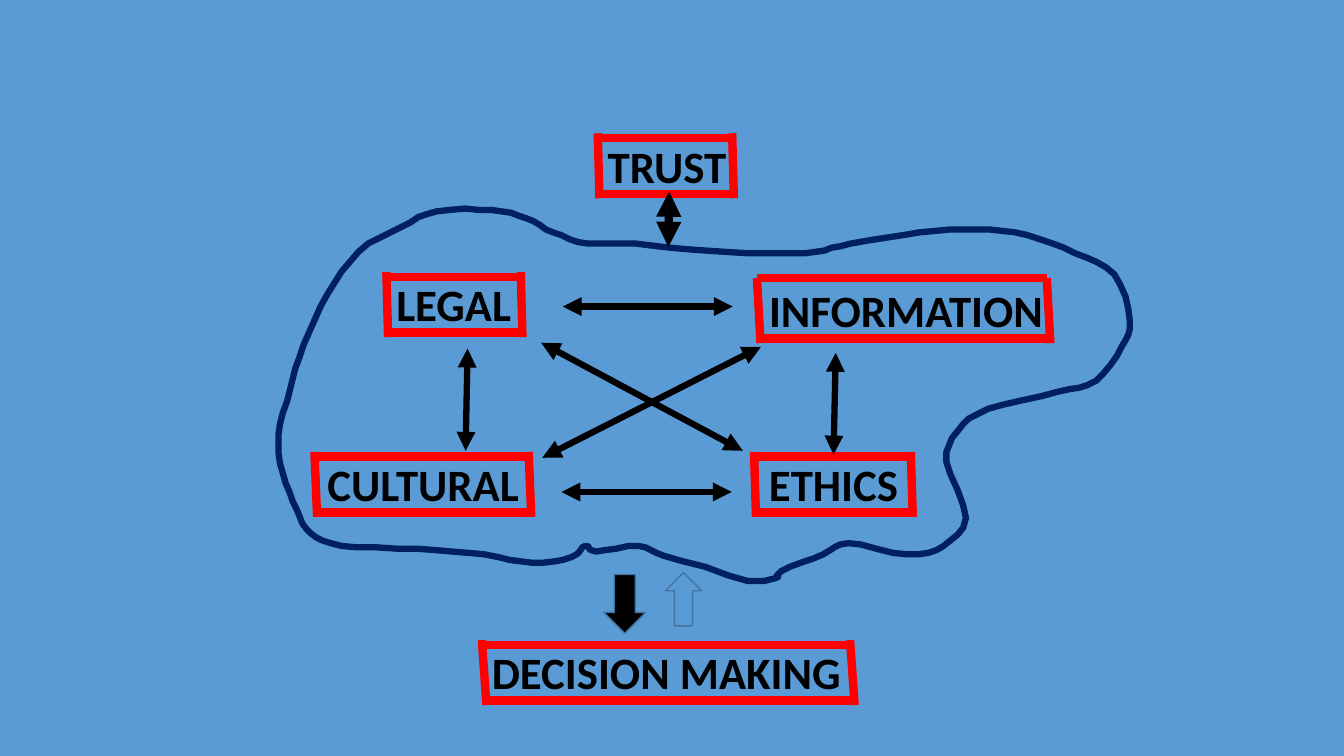
from dataclasses import dataclass

from lxml.etree import SubElement
from pptx import Presentation
from pptx.dml.color import RGBColor
from pptx.enum.shapes import MSO_CONNECTOR, MSO_SHAPE
from pptx.enum.text import MSO_AUTO_SIZE
from pptx.oxml.ns import qn
from pptx.shapes.autoshape import Shape
from pptx.slide import Slide
from pptx.util import Pt

Point = tuple[float, float]


@dataclass(frozen=True)
class Theme:
    background: str = "5B9BD5"
    ink: str = "000000"
    frame: str = "FF0000"
    cloud: str = "002060"
    arrow_border: str = "43739E"
    font: str = "Calibri"
    label_size: float = 32
    heavy_line: float = 6
    medium_line: float = 4.5
    thin_line: float = 1


@dataclass(frozen=True)
class Concept:
    text: str
    left: float
    top: float
    frame_width: float
    text_width: float
    text_offset: float = 0
    top_inset: float = 3.4


@dataclass(frozen=True)
class Link:
    start: Point
    end: Point
    weight: float


@dataclass(frozen=True)
class BlockArrow:
    kind: MSO_SHAPE
    left: float
    top: float
    width: float
    height: float
    fill: str


THEME = Theme()
FRAME_HEIGHT = 46.4
BOTTOM_INSET = 3.2
SKEW_RATIO = 1 / 80
CURVE_STEPS = 4

CONCEPTS = [
    Concept("TRUST", 427, 95.2, 96, 101),
    Concept("LEGAL", 276, 194.4, 96, 97),
    Concept("INFORMATION", 540.7, 198.7, 207, 220, 1.5, 0),
    Concept("CULTURAL", 224.6, 322.8, 153, 153, 2.2),
    Concept("ETHICS", 538.6, 322.8, 112, 108, 3.6),
    Concept("DECISION MAKING", 344.2, 457.2, 263, 266),
]

LINKS = [
    Link((402, 219), (523.4, 219), THEME.medium_line),
    Link((401, 351.4), (522.7, 351.4), THEME.medium_line),
    Link((332.6, 322), (334, 249), THEME.medium_line),
    Link((595.4, 324.7), (597, 252), THEME.medium_line),
    Link((530.6, 322), (386.6, 244.8), THEME.medium_line),
    Link((387.4, 327), (543.6, 247.7), THEME.medium_line),
    Link((477.4, 176.4), (478, 136.8), THEME.heavy_line),
]

BLOCK_ARROWS = [
    BlockArrow(MSO_SHAPE.DOWN_ARROW, 431.3, 410.4, 30, 42, THEME.ink),
    BlockArrow(MSO_SHAPE.UP_ARROW, 475.2, 409, 26, 38, THEME.background),
]

CLOUD_KNOTS: list[Point] = [
    (454, 174), (420, 174), (395, 166), (376, 156), (351, 150), (312, 151),
    (287, 162), (256, 180), (234, 210), (217, 246), (207, 279), (199, 310),
    (202, 338), (212, 364), (222, 381), (244, 390), (298, 392), (346, 396),
    (380, 402), (408, 398), (418, 390), (426, 394), (456, 390), (474, 397),
    (504, 405), (534, 415), (554, 413), (558, 408), (588, 396), (606, 388),
    (648, 396), (674, 390), (690, 370), (676, 330), (684, 308), (706, 292),
    (755, 280), (783, 272), (801, 248), (807, 229), (796, 196), (768, 181),
    (734, 168), (698, 164), (657, 166), (608, 174), (582, 180), (548, 181),
    (490, 178),
]


def color(value: str) -> RGBColor:
    return RGBColor.from_string(value)


def blend(before: float, start: float, end: float, after: float, t: float) -> float:
    linear = end - before
    square = 2 * before - 5 * start + 4 * end - after
    cube = 3 * (start - end) + after - before
    return start + (linear * t + square * t**2 + cube * t**3) / 2


def smooth_outline(knots: list[Point]) -> list[Point]:
    outline = []
    for index in range(len(knots)):
        window = [knots[(index + step) % len(knots)] for step in range(-1, 3)]
        for step in range(CURVE_STEPS):
            x, y = (blend(*axis, step / CURVE_STEPS) for axis in zip(*window))
            outline.append((x, y))
    return outline


def draw_line(slide: Slide, link: Link, line_color: str, arrows: bool) -> None:
    ends = [Pt(value) for value in (*link.start, *link.end)]
    connector = slide.shapes.add_connector(MSO_CONNECTOR.STRAIGHT, *ends)
    connector.line.width = Pt(link.weight)
    connector.line.color.rgb = color(line_color)
    properties = connector.element.spPr
    if arrows:
        for tag in ("a:headEnd", "a:tailEnd"):
            SubElement(properties.find(qn("a:ln")), qn(tag), type="triangle")
    SubElement(properties, qn("a:effectLst"))


def draw_label(slide: Slide, concept: Concept) -> None:
    left = concept.left + concept.text_offset
    box = slide.shapes.add_textbox(
        Pt(left), Pt(concept.top), Pt(concept.text_width), Pt(FRAME_HEIGHT)
    )
    box.text_frame.word_wrap = False
    box.text_frame.auto_size = MSO_AUTO_SIZE.SHAPE_TO_FIT_TEXT
    run = box.text_frame.paragraphs[0].add_run()
    run.text = concept.text
    formats = {"name": THEME.font, "size": Pt(THEME.label_size), "bold": True}
    for attribute, value in formats.items():
        setattr(run.font, attribute, value)
    run.font.color.rgb = color(THEME.ink)


def draw_frame(slide: Slide, concept: Concept) -> None:
    right = concept.left + concept.frame_width
    bottom = concept.top + FRAME_HEIGHT
    skew = concept.frame_width * SKEW_RATIO
    heights = (concept.top + concept.top_inset, bottom - BOTTOM_INSET)
    edges = [((concept.left, height), (right, height)) for height in heights]
    edges += [((x + skew, bottom), (x, concept.top)) for x in (right, concept.left)]
    for start, end in edges:
        draw_line(slide, Link(start, end, THEME.heavy_line), THEME.frame, False)


def outline_shape(shape: Shape, line_color: str, weight: float) -> None:
    shape.shadow.inherit = False
    shape.line.color.rgb = color(line_color)
    shape.line.width = Pt(weight)


def draw_cloud(slide: Slide) -> None:
    start, *rest = smooth_outline(CLOUD_KNOTS)
    builder = slide.shapes.build_freeform(*start, scale=Pt(1))
    builder.add_line_segments(rest, close=True)
    cloud = builder.convert_to_shape()
    cloud.fill.background()
    outline_shape(cloud, THEME.cloud, THEME.medium_line)


def draw_block_arrow(slide: Slide, arrow: BlockArrow) -> None:
    shape = slide.shapes.add_shape(
        arrow.kind, Pt(arrow.left), Pt(arrow.top), Pt(arrow.width), Pt(arrow.height)
    )
    shape.fill.solid()
    shape.fill.fore_color.rgb = color(arrow.fill)
    outline_shape(shape, THEME.arrow_border, THEME.thin_line)


def main() -> None:
    presentation = Presentation()
    presentation.slide_width, presentation.slide_height = Pt(960), Pt(540)
    slide = presentation.slides.add_slide(presentation.slide_layouts[6])
    slide.background.fill.solid()
    slide.background.fill.fore_color.rgb = color(THEME.background)
    for concept in CONCEPTS:
        draw_label(slide, concept)
        draw_frame(slide, concept)
    draw_cloud(slide)
    for link in LINKS:
        draw_line(slide, link, THEME.ink, True)
    for arrow in BLOCK_ARROWS:
        draw_block_arrow(slide, arrow)
    presentation.save("out.pptx")


if __name__ == "__main__":
    main()
